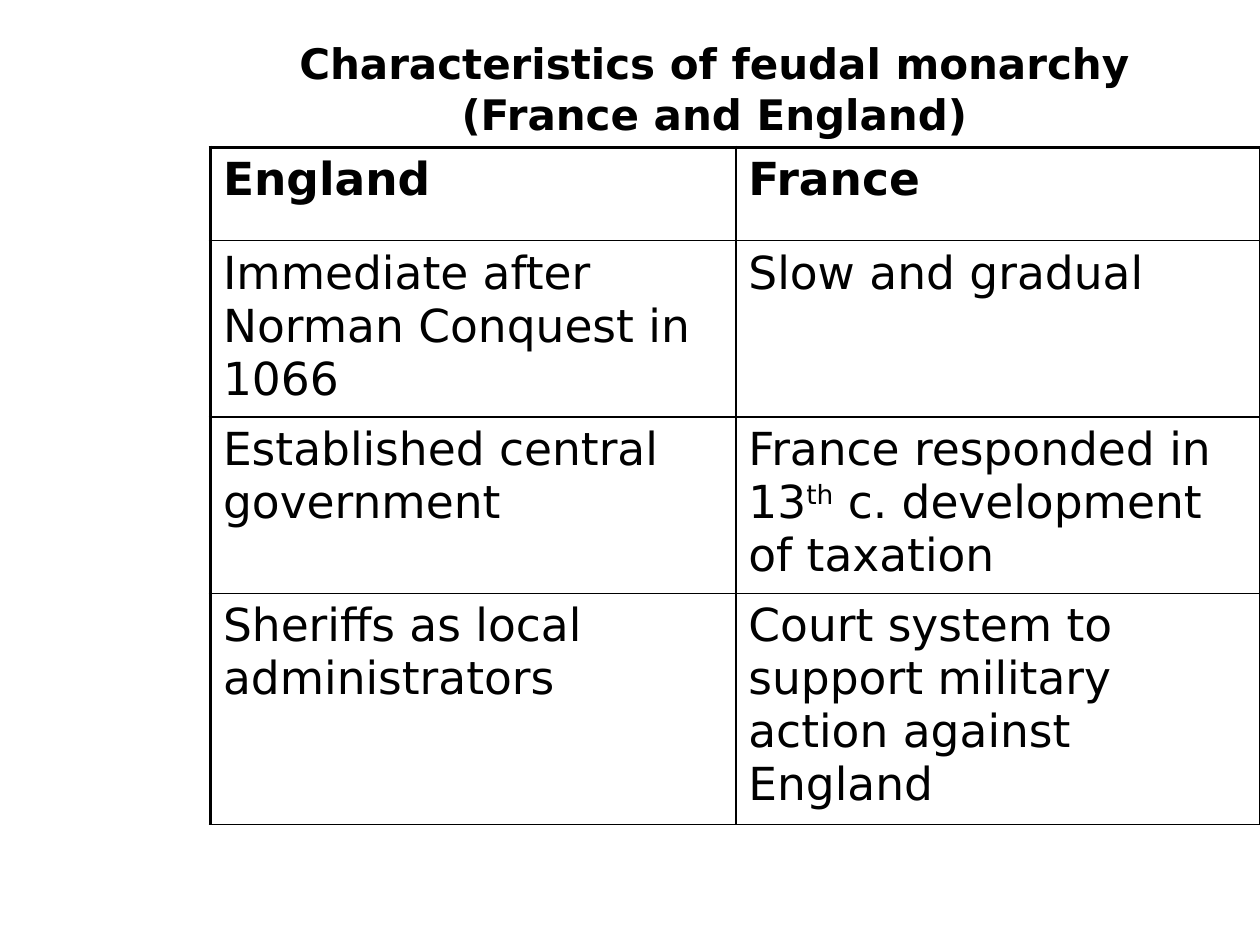
from dataclasses import dataclass

from lxml import etree
from pptx import Presentation
from pptx import util as u
from pptx.dml.color import RGBColor
from pptx.enum import text
from pptx.oxml import ns


@dataclass(frozen=True)
class Theme:
    font: str = "DejaVu Sans"
    ink: str = "000000"
    title_size: int = 24
    cell_size: int = 26
    thin: float = 1
    thick: float = 2.25


@dataclass(frozen=True)
class Span:
    words: str
    superscript: bool = False


@dataclass(frozen=True)
class Row:
    height: float
    england: tuple[Span, ...]
    france: tuple[Span, ...]
    bold: bool = False


THEME = Theme()
COLUMN_WIDTH = 4.17
ROWS = (
    Row(0.74, (Span("England"),), (Span("France"),), bold=True),
    Row(1.4, (Span("Immediate after Norman Conquest in 1066"),), (Span("Slow and gradual"),)),
    Row(
        1.4,
        (Span("Established central government"),),
        (Span("France responded in 13"), Span("th", True), Span(" c. development of taxation")),
    ),
    Row(
        1.83,
        (Span("Sheriffs as local administrators"),),
        (Span("Court system to support military action against England"),),
    ),
)


def write(para, spans: tuple[Span, ...], size: int, bold: bool) -> None:
    """Fill a paragraph with spans in the theme font."""
    for span in spans:
        run = para.add_run()
        run.text = span.words
        if span.superscript:
            run._r.get_or_add_rPr().set("baseline", "30000")
    para.space_before = u.Pt(0)
    para.font.name = THEME.font
    para.font.size = u.Pt(size)
    para.font.bold = bold
    para.font.color.rgb = RGBColor.from_string(THEME.ink)


def draw_border(cell, side: str, width: float) -> None:
    """Add a solid line to one side of a cell."""
    properties = cell._tc.get_or_add_tcPr()
    line = etree.SubElement(properties, ns.qn(f"a:ln{side}"), w=str(u.Pt(width)))
    fill = etree.SubElement(line, ns.qn("a:solidFill"))
    etree.SubElement(fill, ns.qn("a:srgbClr"), val=THEME.ink)


def draw_title(page) -> None:
    """Place the centred heading."""
    box = page.shapes.add_textbox(u.Inches(1.67), u.Inches(0.25), u.Inches(8), u.Inches(0.9))
    box.text_frame.word_wrap = True
    para = box.text_frame.paragraphs[0]
    para.alignment = text.PP_ALIGN.CENTER
    heading = Span("Characteristics of feudal monarchy (France and England)")
    write(para, (heading,), THEME.title_size, bold=True)


def draw_comparison(page, rows: tuple[Row, ...]) -> None:
    """Build the two-country table with a heavier left, top and right edge."""
    table = page.shapes.add_table(
        len(rows), 2, u.Inches(1.67), u.Inches(1.17),
        u.Inches(2 * COLUMN_WIDTH), u.Inches(sum(row.height for row in rows)),
    ).table
    table.horz_banding = False
    for column in table.columns:
        column.width = u.Inches(COLUMN_WIDTH)
    for index, row in enumerate(rows):
        table.rows[index].height = u.Inches(row.height)
        for position, spans in enumerate((row.england, row.france)):
            cell = table.cell(index, position)
            heavy = {"L": position == 0, "R": position == 1, "T": index == 0, "B": False}
            for side, is_heavy in heavy.items():
                draw_border(cell, side, THEME.thick if is_heavy else THEME.thin)
            cell.fill.background()
            write(cell.text_frame.paragraphs[0], spans, THEME.cell_size, row.bold)


def main() -> None:
    """Build and save the slide."""
    deck = Presentation()
    deck.slide_width, deck.slide_height = u.Inches(10), u.Inches(7.5)
    page = deck.slides.add_slide(deck.slide_layouts[6])
    draw_title(page)
    draw_comparison(page, ROWS)
    deck.save("out.pptx")


if __name__ == "__main__":
    main()
